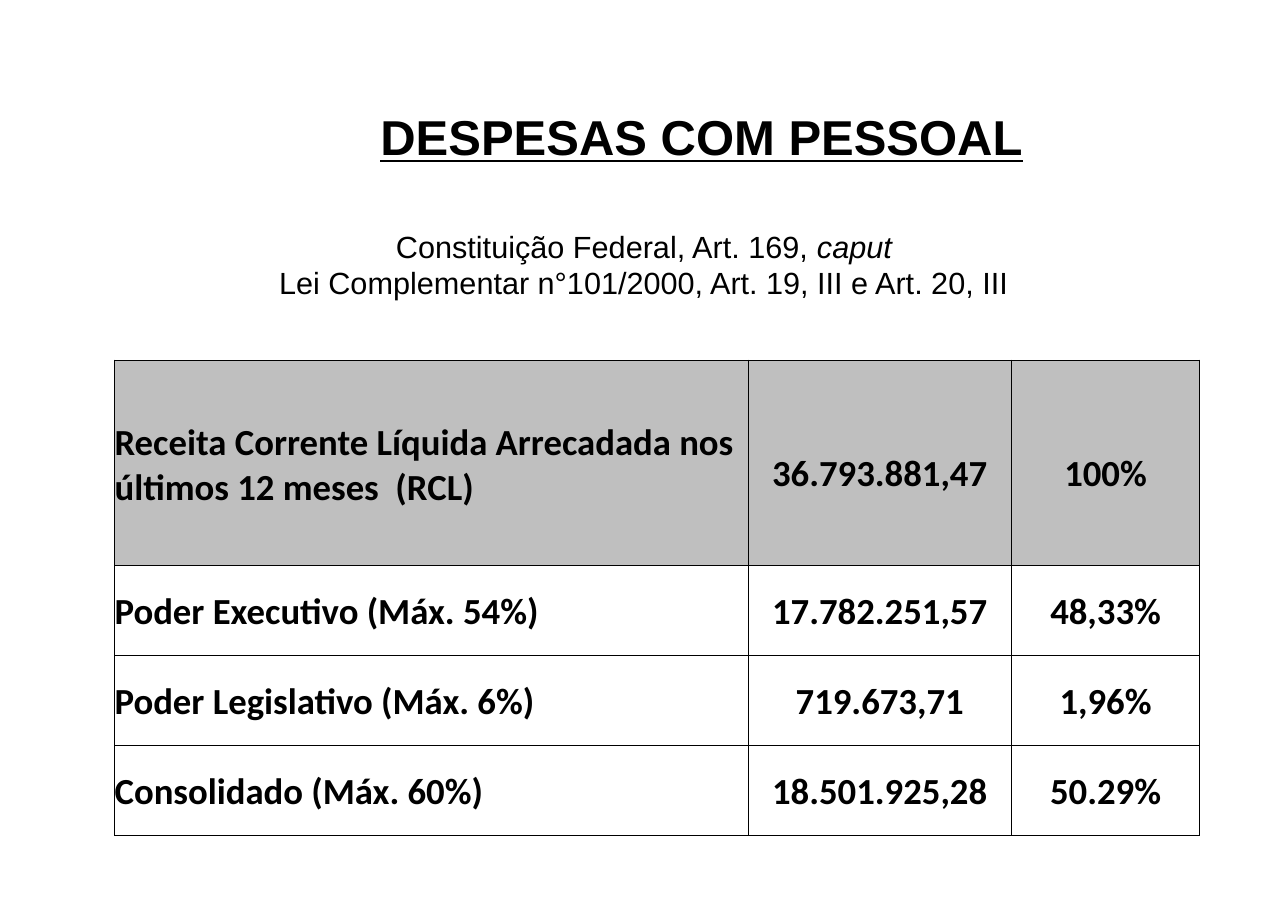
from dataclasses import dataclass

from lxml import etree
from pptx import Presentation
from pptx.dml.color import RGBColor
from pptx.enum.text import MSO_ANCHOR, MSO_AUTO_SIZE, PP_ALIGN
from pptx.oxml.ns import qn
from pptx.util import Emu, Pt

PX = 9144  # EMU per px, 100 px to the inch
LEFT, MID = PP_ALIGN.LEFT, PP_ALIGN.CENTER
TOP, CENTRE = MSO_ANCHOR.TOP, MSO_ANCHOR.MIDDLE
GROW = MSO_AUTO_SIZE.SHAPE_TO_FIT_TEXT
BLACK, GREY = "000000", "BFBFBF"


@dataclass
class Row:
    label: str
    value: str
    share: str
    high: int = 82
    inset: int = 3
    fill: str = ""
    before: float = 2.2
    after: float = 0
    lead: float = 1.0


ROWS = [
    Row("Receita Corrente Líquida Arrecadada nos últimos 12 meses  (RCL)",
        "36.793.881,47", "100%", 186, 15, GREY, 0, 6, 1.15),
    Row("Poder Executivo (Máx. 54%)", "17.782.251,57", "48,33%"),
    Row("Poder Legislativo (Máx. 6%)", "719.673,71", "1,96%"),
    Row("Consolidado (Máx. 60%)", "18.501.925,28", "50.29%"),
]
COLS = [575, 239, 171]


def px(size: int) -> Emu:
    return Emu(size * PX)


def colour(code: str) -> RGBColor:
    return RGBColor.from_string(code)


def style(para, face: str, size: int, bold: bool = False) -> None:
    for run in para.runs:
        run.font.name, run.font.size, run.font.bold = face, Pt(size), bold
        run.font.color.rgb = colour(BLACK)


def set_frame(frame, left: int, top: int) -> None:
    frame.margin_left, frame.margin_top = px(left), px(top)
    frame.margin_right = frame.margin_bottom = 0
    frame.word_wrap, frame.auto_size = True, GROW
    frame.vertical_anchor = TOP


def add_border(cell) -> None:
    props = cell._tc.get_or_add_tcPr()
    for spot, side in enumerate(("a:lnL", "a:lnR", "a:lnT", "a:lnB")):
        line = etree.Element(qn(side), w=str(Pt(0.75)))
        fill = etree.SubElement(line, qn("a:solidFill"))
        etree.SubElement(fill, qn("a:srgbClr"), val=BLACK)
        props.insert(spot, line)


def fill_cell(cell, text: str, row: Row, first: bool) -> None:
    cell.margin_left = cell.margin_right = cell.margin_bottom = 0
    cell.margin_top = px(5 if first and row.fill else row.inset)
    cell.vertical_anchor = CENTRE
    if row.fill:
        cell.fill.solid()
        cell.fill.fore_color.rgb = colour(row.fill)
    else:
        cell.fill.background()
    add_border(cell)
    para = cell.text_frame.paragraphs[0]
    para.text = text
    style(para, "Calibri", 24, True)
    if first:
        para.alignment = LEFT
        para.space_before, para.space_after = Pt(row.before), Pt(row.after)
    else:
        para.alignment, para.line_spacing = MID, row.lead


def add_title(slide) -> None:
    title = slide.shapes.title
    title.left, title.top, title.width, title.height = map(px, (49, 94, 1064, 57))
    frame = title.text_frame
    frame.text = "DESPESAS COM PESSOAL"
    set_frame(frame, 112, 5)
    para = frame.paragraphs[0]
    para.alignment, para.line_spacing, para.space_before = MID, Pt(36.8), Pt(3.6)
    style(para, "Arial", 32, True)
    para.runs[0].font.underline = True


def add_laws(slide) -> None:
    frame = slide.shapes.add_textbox(*map(px, (251, 206, 667, 68))).text_frame
    frame.text = ("Constituição Federal, Art. 169, \n"
                  "Lei Complementar n°101/2000, Art. 19, III e Art. 20, III")
    set_frame(frame, 0, 1)
    head = frame.paragraphs[0]
    term = head.add_run()
    term.text, term.font.italic = "caput", True
    head.space_before = Pt(1.1)
    for para in frame.paragraphs:
        para.alignment, para.line_spacing = MID, Pt(23.6)
        style(para, "Arial", 20)


def add_costs(slide) -> None:
    box = (104, 327, sum(COLS), sum(row.high for row in ROWS))
    table = slide.shapes.add_table(len(ROWS), len(COLS), *map(px, box)).table
    table.horz_banding = table.first_row = False
    for col, wide in zip(table.columns, COLS):
        col.width = px(wide)
    for line, row in zip(table.rows, ROWS):
        line.height = px(row.high)
        for spot, text in enumerate((row.label, row.value, row.share)):
            fill_cell(line.cells[spot], text, row, spot == 0)


def main() -> None:
    deck = Presentation()
    deck.slide_width, deck.slide_height = px(1169), px(827)
    slide = deck.slides.add_slide(deck.slide_layouts[5])
    add_title(slide)
    add_laws(slide)
    add_costs(slide)
    deck.save("out.pptx")


if __name__ == "__main__":
    main()
